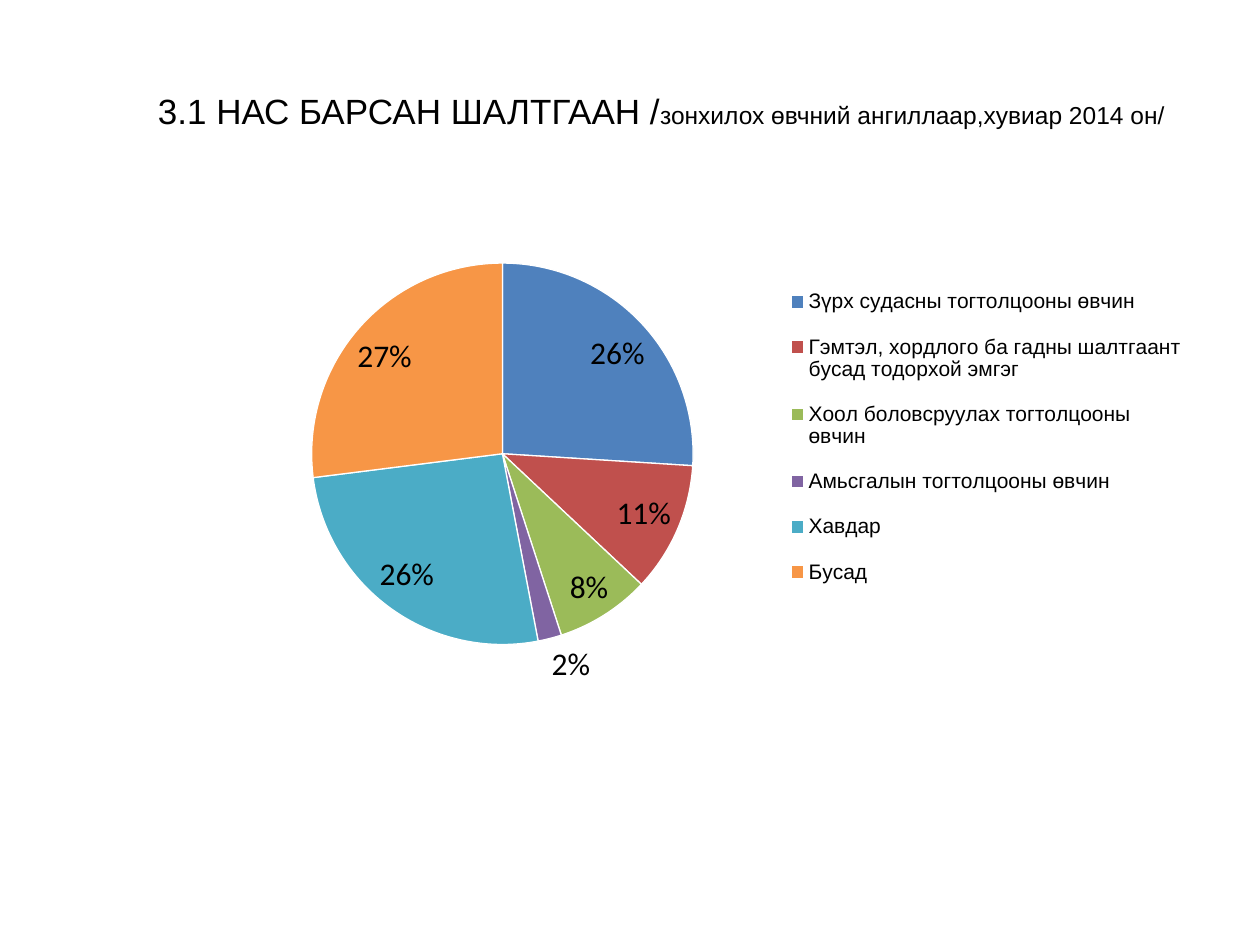
"""Build a slide with a pie chart of the leading causes of death in 2014."""
from lxml import etree
from pptx import Presentation
from pptx import util as u
from pptx.chart.data import CategoryChartData
from pptx.dml.color import RGBColor
from pptx.enum import chart as charts, text
from pptx.oxml.ns import qn

BLACK = RGBColor(0x00, 0x00, 0x00)
WHITE = RGBColor(0xFF, 0xFF, 0xFF)
BLUE = RGBColor(0x4F, 0x81, 0xBD)
RED = RGBColor(0xC0, 0x50, 0x4D)
GREEN = RGBColor(0x9B, 0xBB, 0x59)
PURPLE = RGBColor(0x80, 0x64, 0xA2)
TEAL = RGBColor(0x4B, 0xAC, 0xC6)
ORANGE = RGBColor(0xF7, 0x96, 0x46)

CAUSES = [
    ("Зүрх судасны тогтолцооны өвчин", 26, BLUE),
    ("Гэмтэл, хордлого ба гадны шалтгаант бусад тодорхой эмгэг", 11, RED),
    ("Хоол боловсруулах тогтолцооны өвчин", 8, GREEN),
    ("Амьсгалын тогтолцооны өвчин", 2, PURPLE),
    ("Хавдар", 26, TEAL),
    ("Бусад", 27, ORANGE),
]


class SlideBuilder:
    """Holds the style and the current slide."""

    heading_font = "Arial"
    chart_font = "Calibri"

    def __init__(self, presentation):
        self.slide = presentation.slides.add_slide(presentation.slide_layouts[5])

    def style(self, font, name, size):
        font.name, font.size = name, u.Pt(size)
        font.color.rgb = BLACK

    def title(self, box, runs):
        shape = self.slide.shapes.title
        shape.left, shape.top, shape.width, shape.height = map(u.Pt, box)
        frame = shape.text_frame
        frame.word_wrap = True
        frame.vertical_anchor = text.MSO_ANCHOR.MIDDLE
        paragraph = frame.paragraphs[0]
        paragraph.alignment = text.PP_ALIGN.CENTER
        for words, size in runs:
            run = paragraph.add_run()
            run.text = words
            self.style(run.font, self.heading_font, size)

    def place(self, element, before, box, inner=False):
        for old in element.findall(qn("c:layout")):
            element.remove(old)
        layout = etree.Element(qn("c:layout"))
        manual = etree.SubElement(layout, qn("c:manualLayout"))
        settings = [("layoutTarget", "inner")] if inner else []
        settings += [("xMode", "edge"), ("yMode", "edge")]
        settings += zip("xywh", box)
        for tag, value in settings:
            etree.SubElement(manual, qn(f"c:{tag}")).set("val", str(value))
        element.find(qn(before)).addprevious(layout)

    def pie(self, box, slices, plot_box, legend_box):
        data = CategoryChartData()
        data.categories = [name for name, _, _ in slices]
        data.add_series("Series 1", [value for _, value, _ in slices])
        chart = self.slide.shapes.add_chart(
            charts.XL_CHART_TYPE.PIE, *map(u.Pt, box), data).chart
        chart.has_title = False
        self.style(chart.font, self.chart_font, 18)

        plot = chart.plots[0]
        plot.vary_by_categories = True
        for index, (_, _, color) in enumerate(slices):
            point = plot.series[0].points[index].format
            point.fill.solid()
            point.fill.fore_color.rgb = color
            point.line.color.rgb = WHITE
            point.line.width = u.Pt(0.75)

        labels = plot.series[0].data_labels
        labels.show_percentage, labels.show_value = True, False
        labels.number_format, labels.number_format_is_linked = "0%", False
        labels.position = charts.XL_LABEL_POSITION.BEST_FIT
        self.style(labels.font, self.chart_font, 18)

        chart.has_legend = True
        legend = chart.legend
        legend.position = charts.XL_LEGEND_POSITION.RIGHT
        legend.include_in_layout = False
        self.style(legend.font, self.heading_font, 12)

        area = chart.element.find(f".//{qn('c:plotArea')}")
        self.place(area, "c:pieChart", plot_box, inner=True)
        self.place(area.getparent().find(qn("c:legend")), "c:overlay", legend_box)


def main():
    presentation = Presentation()
    presentation.slide_width, presentation.slide_height = u.Pt(720), u.Pt(540)
    builder = SlideBuilder(presentation)
    builder.title((72, 42, 612, 42), [
        ("3.1 НАС БАРСАН ШАЛТГААН /", 20),
        ("зонхилох өвчний ангиллаар,хувиар 2014 он/", 14),
    ])
    builder.pie((96, 120, 588, 276), CAUSES,
                plot_box=(0.05, 0.11, 0.55, 0.79),
                legend_box=(0.6, 0.12, 0.39, 0.7))
    presentation.save("out.pptx")


if __name__ == "__main__":
    main()
